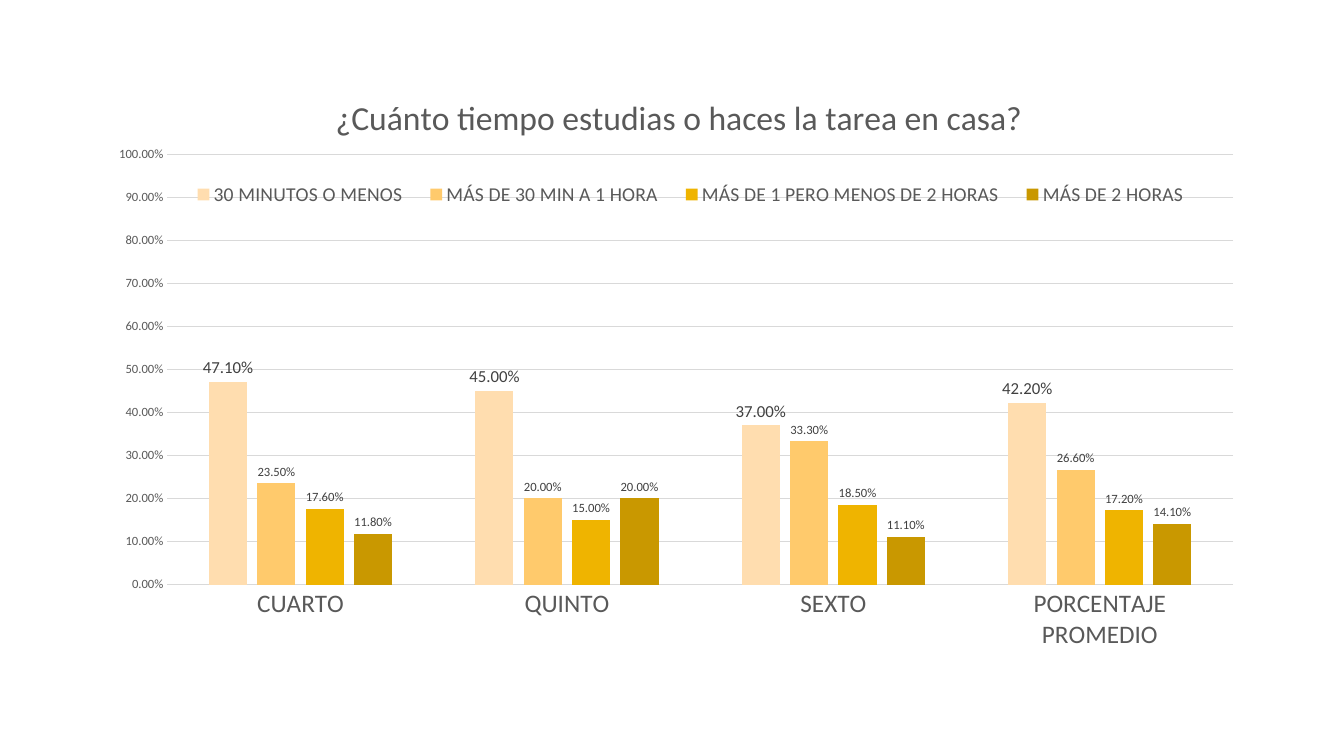
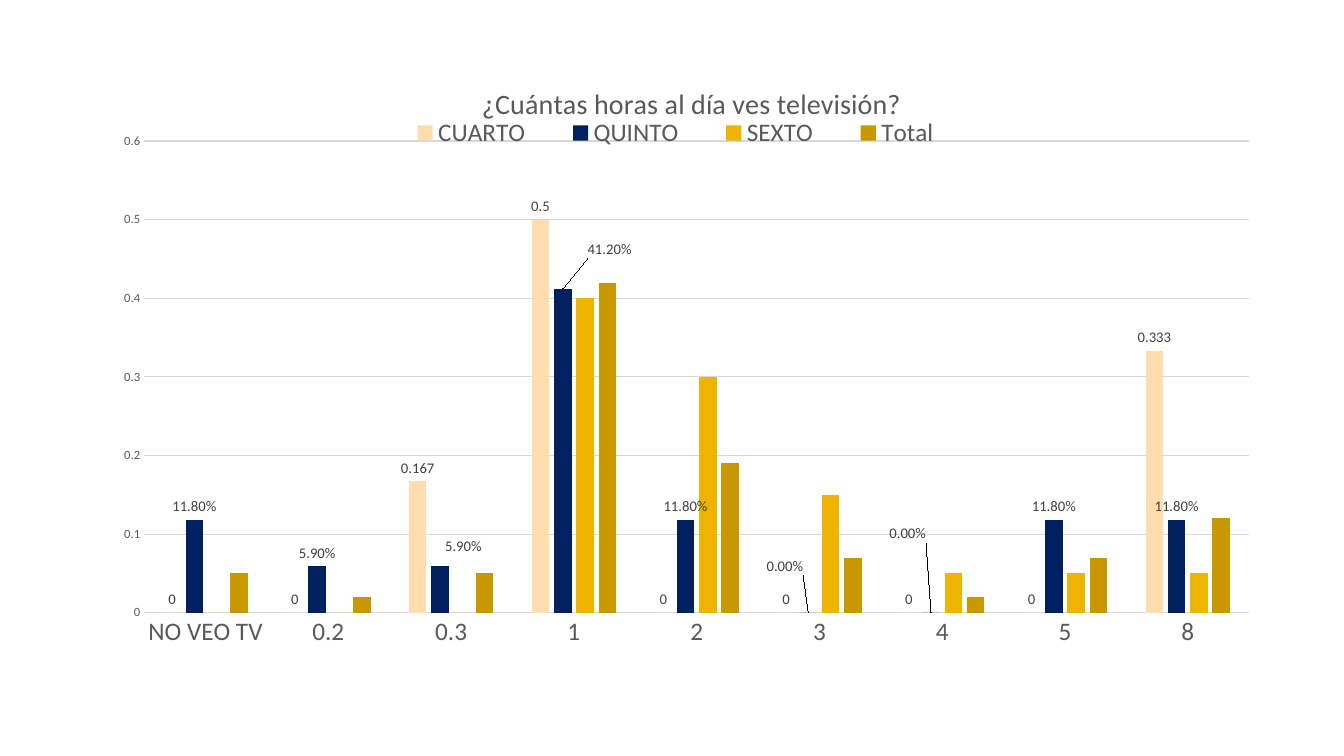
import pptx
import pptx.util
import pptx.chart.data
import pptx.dml.color
import pptx.enum.chart
import pptx.oxml
import pptx.oxml.ns

Inches, Pt = pptx.util.Inches, pptx.util.Pt
RGBColor = pptx.dml.color.RGBColor
XL = pptx.enum.chart

FONT = "Calibri"
GREY = RGBColor(0x59, 0x59, 0x59)
DARK = RGBColor(0x40, 0x40, 0x40)
RULE = RGBColor(0xD9, 0xD9, 0xD9)
PEACH = RGBColor(0xFF, 0xDD, 0xAF)
APRICOT = RGBColor(0xFF, 0xCA, 0x6C)
NAVY = RGBColor(0x00, 0x20, 0x60)
AMBER = RGBColor(0xEF, 0xB4, 0x00)
OCHRE = RGBColor(0xC9, 0x98, 0x00)
PERCENT = "0.00%"


def set_font(font, size, color=GREY):
    """Apply the deck's typeface with a size and colour."""
    font.name, font.size, font.bold = FONT, Pt(size), False
    font.color.rgb = color


def set_line(line, color=RULE):
    """Draw a thin rule."""
    line.color.rgb = color
    line.width = Pt(0.75)


def chart_element(tag, parent, index, **attributes):
    """Insert a chart element at an index of its parent."""
    el = pptx.oxml.parse_xml(f"<c:{tag} {pptx.oxml.ns.nsdecls('c')}/>")
    for name, value in attributes.items():
        el.set(name, str(value))
    parent.insert(index, el)
    return el


def set_layout(parent, index, **values):
    """Give a chart part a manual layout in fractions of the chart."""
    for old in parent.findall(pptx.oxml.ns.qn("c:layout")):
        parent.remove(old)
    manual = chart_element("manualLayout", chart_element("layout", parent, index), 0)
    for name, value in values.items():
        chart_element(name, manual, len(manual), val=value)


def place(parent, index, chart_box, box, inner=False):
    """Lay out a chart part at a slide position in inches."""
    left, top, width, height = chart_box
    values = {"layoutTarget": "inner"} if inner else {}
    values.update(xMode="edge", yMode="edge",
                  x=(box[0] - left) / width, y=(box[1] - top) / height)
    if len(box) == 4:
        values.update(w=box[2] / width, h=box[3] / height)
    set_layout(parent, index, **values)


def add_labels(series, size, number_format, moved):
    """Label a series, shifting the points listed in moved."""
    labels = series.data_labels
    labels.show_value = True
    labels.number_format = number_format
    labels.number_format_is_linked = False
    labels.position = XL.XL_LABEL_POSITION.OUTSIDE_END
    set_font(labels.font, size, DARK)
    for point, (dx, dy) in moved.items():
        label = series.points[point].data_label
        set_font(label.font, size, DARK)
        label.position = XL.XL_LABEL_POSITION.OUTSIDE_END
        item = next(d for d in labels._element.findall(pptx.oxml.ns.qn("c:dLbl"))
                    if d.idx_val == point)
        set_layout(item, 1, x=dx, y=dy)
        chart_element("numFmt", item, 2, formatCode=number_format, sourceLinked=0)


def style_axes(chart, maximum, number_format):
    """Format the category and value axes."""
    cat, val = chart.category_axis, chart.value_axis
    for axis, size in ((cat, 18), (val, 9)):
        axis.major_tick_mark = axis.minor_tick_mark = XL.XL_TICK_MARK.NONE
        set_font(axis.tick_labels.font, size)
    set_line(cat.format.line)
    val.format.line.fill.background()
    val.minimum_scale, val.maximum_scale, val.major_unit = 0, maximum, 0.1
    val.has_major_gridlines = True
    set_line(val.major_gridlines.format.line)
    val.tick_labels.number_format = number_format
    val.tick_labels.number_format_is_linked = False


def chart_slide(prs, box, title, title_at, title_size, legend_box, legend_size,
                plot_box, categories, series, maximum, number_format):
    """Add a slide holding one clustered column chart."""
    s = prs.slides.add_slide(prs.slide_layouts[6])
    data = pptx.chart.data.CategoryChartData(number_format=number_format)
    data.categories = categories
    for name, values, *_ in series:
        data.add_series(name, values)
    chart = s.shapes.add_chart(XL.XL_CHART_TYPE.COLUMN_CLUSTERED,
                               *(Inches(v) for v in box), data).chart
    set_font(chart.font, 10)

    chart.has_title = True
    p = chart.chart_title.text_frame.paragraphs[0]
    p.text = title
    set_font(p.font, title_size)
    place(chart.chart_title._element, 1, box, title_at)

    chart.has_legend = True
    chart.legend.position = XL.XL_LEGEND_POSITION.BOTTOM
    chart.legend.include_in_layout = False
    set_font(chart.legend.font, legend_size)
    place(chart.legend._element, 1, box, legend_box)

    style_axes(chart, maximum, number_format)
    place(chart._chartSpace.chart.plotArea, 0, box, plot_box, inner=True)

    plot = chart.plots[0]
    plot.gap_width, plot.overlap, plot.vary_by_categories = 219, -27, False
    for ser, (_, _, color, *labels) in zip(plot.series, series):
        ser.format.fill.solid()
        ser.format.fill.fore_color.rgb = color
        if labels:
            add_labels(ser, *labels)


def main():
    """Build the deck."""
    prs = pptx.Presentation()
    prs.slide_width, prs.slide_height = Inches(13.33), Inches(7.5)
    chart_slide(
        prs, (0.95, 0.65, 11.51, 6.31),
        "¿Cuánto tiempo estudias o haces la tarea en casa?", (3.27, 0.88), 24,
        (1.75, 1.78, 10.2, 0.3), 14, (1.66, 1.53, 10.57, 4.27),
        ("CUARTO", "QUINTO", "SEXTO", "PORCENTAJE PROMEDIO"),
        (("30 MINUTOS O MENOS", (0.471, 0.45, 0.37, 0.422), PEACH, 12, PERCENT, {}),
         ("MÁS DE 30 MIN A 1 HORA", (0.235, 0.2, 0.333, 0.266), APRICOT, 9, PERCENT, {}),
         ("MÁS DE 1 PERO MENOS DE 2 HORAS", (0.176, 0.15, 0.185, 0.172), AMBER, 9, PERCENT, {}),
         ("MÁS DE 2 HORAS", (0.118, 0.2, 0.111, 0.141), OCHRE, 9, PERCENT, {})),
        1, PERCENT)
    moved = {2: (0.02, -0.01), 3: (0.04, -0.04), 5: (-0.02, -0.05), 6: (-0.02, -0.1)}
    chart_slide(
        prs, (1, 0.51, 11.62, 6.52),
        "¿Cuántas horas al día ves televisión?", (4.73, 0.78), 20,
        (3.75, 1.13, 5.9, 0.38), 18, (1.43, 1.4, 10.96, 4.68),
        ("NO VEO TV", "0.2", "0.3", "1", "2", "3", "4", "5", "8"),
        (("CUARTO", (0, 0, 0.167, 0.5, 0, 0, 0, 0, 0.333), PEACH, 10.5, "General", {}),
         ("QUINTO", (0.118, 0.059, 0.059, 0.412, 0.118, 0, 0, 0.118, 0.118),
          NAVY, 10.5, PERCENT, moved),
         ("SEXTO", (0, 0, 0, 0.4, 0.3, 0.15, 0.05, 0.05, 0.05), AMBER),
         ("Total", (0.05, 0.02, 0.05, 0.42, 0.19, 0.07, 0.02, 0.07, 0.12), OCHRE)),
        0.6, "General")
    prs.save("out.pptx")


if __name__ == "__main__":
    main()
